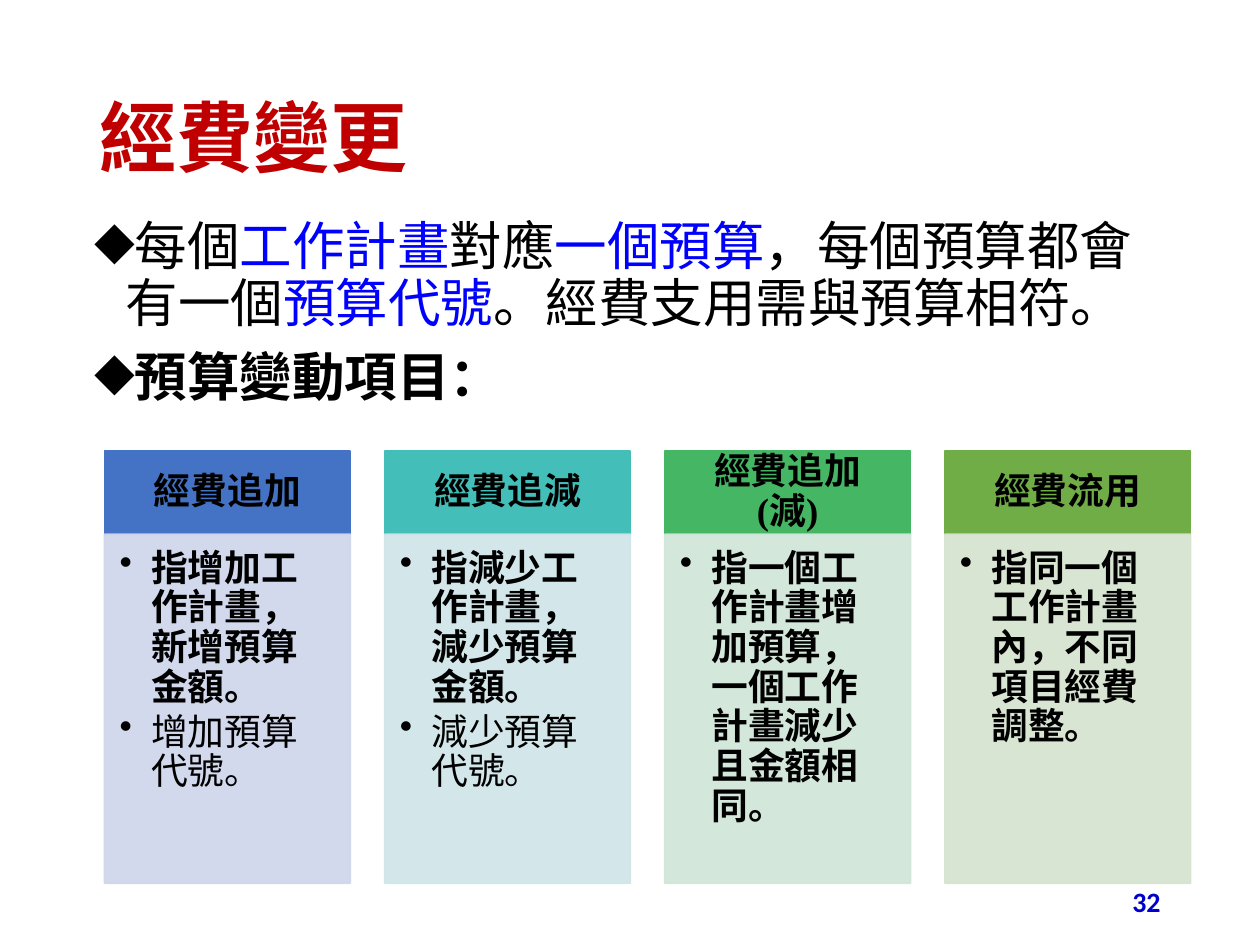
"""Build the budget change slide with four headed columns."""
import pptx
import pptx.util
import pptx.dml.color
import pptx.enum.shapes
import pptx.enum.text
import pptx.oxml
import pptx.oxml.ns
from lxml import etree

Inches, Pt = pptx.util.Inches, pptx.util.Pt
ALIGN, ANCHOR = pptx.enum.text.PP_ALIGN, pptx.enum.text.MSO_ANCHOR

COLORS = {"black": "000000", "blue": "0000FF", "red": "C00000", "number": "0000CC"}
TITLE = "經費變更"
NUMBER = "32"
BODY = [
    [("每個", "black"), ("工作計畫", "blue"), ("對應", "black"), ("一個預算", "blue"),
     ("，每個預算都會有一個", "black"), ("預算代號", "blue"),
     ("。經費支用需與預算相符。", "black")],
    [("預算變動項目：", "black")],
]
COLUMNS = [
    ("經費追加", "4472C4", "CFD5EA", ["指增加工作計畫，新增預算金額。", "增加預算代號。"]),
    ("經費追減", "43BEB9", "CFE5E8", ["指減少工作計畫，減少預算金額。", "減少預算代號。"]),
    ("經費追加(減)", "45B664", "CFE5D8", ["指一個工作計畫增加預算，一個工作計畫減少且金額相同。"]),
    ("經費流用", "70AD47", "D5E3CF", ["指同一個工作計畫內，不同項目經費調整。"]),
]
GRID = {"left": 0.83, "top": 3.58, "pitch": 2.223, "width": 1.95, "head": 0.66, "detail": 2.77}
HEAD_INSETS = (0.16, 0.09, 0.16, 0.09)
DETAIL_INSETS = (0.12, 0.12, 0.16, 0.18)


def rgb(value):
    return pptx.dml.color.RGBColor.from_string(value)


def apply(target, values):
    for name, value in values.items():
        setattr(target, name, value)


def set_frame(frame, anchor, insets=(0.1, 0.05, 0.1, 0.05)):
    names = ("margin_left", "margin_top", "margin_right", "margin_bottom")
    apply(frame, dict(zip(names, map(Inches, insets))))
    apply(frame, {"word_wrap": True, "vertical_anchor": anchor,
                  "auto_size": pptx.enum.text.MSO_AUTO_SIZE.NONE})


def write(para, spans, size, font, bold=False, bullet=None, **layout):
    if bullet:
        properties = para._p.get_or_add_pPr()
        apply_indent = {"marL": Inches(0.25), "indent": -Inches(0.25)}
        for name, value in apply_indent.items():
            properties.set(name, str(value))
        mark = etree.SubElement(properties, pptx.oxml.ns.qn("a:buChar"))
        mark.set("char", bullet)
    apply(para, layout)
    for text, color in spans:
        span = para.add_run()
        span.text = text
        apply(span.font, {"size": Pt(size), "name": font, "bold": bold})
        span.font.color.rgb = rgb(COLORS[color])


def add_panel(group, place, color, insets, anchor, alpha=None):
    panel = group.shapes.add_shape(pptx.enum.shapes.MSO_SHAPE.RECTANGLE, *map(Inches, place))
    panel.shadow.inherit = False
    panel.fill.solid()
    panel.fill.fore_color.rgb = rgb(color)
    panel.line.color.rgb = rgb(color)
    panel.line.width = Pt(1)
    if alpha:
        for node in panel._element.spPr.iter(pptx.oxml.ns.qn("a:srgbClr")):
            etree.SubElement(node, pptx.oxml.ns.qn("a:alpha")).set("val", str(alpha * 1000))
    set_frame(panel.text_frame, anchor, insets)
    return panel.text_frame


def paragraphs(frame, items):
    for index, item in enumerate(items):
        yield index, frame.paragraphs[0] if index == 0 else frame.add_paragraph(), item


def add_column(group, index, heading, color, tint, details):
    left = GRID["left"] + index * GRID["pitch"]
    top, width = GRID["top"], GRID["width"]
    head = add_panel(group, (left, top, width, GRID["head"]), color, HEAD_INSETS, ANCHOR.MIDDLE)
    write(head.paragraphs[0], [(heading, "black")], 21, "Times New Roman", True,
          alignment=ALIGN.CENTER, line_spacing=0.9)
    detail = add_panel(group, (left, top + GRID["head"], width, GRID["detail"]), tint,
                       DETAIL_INSETS, ANCHOR.TOP, 90)
    for row, para, text in paragraphs(detail, details):
        write(para, [(text, "black")], 21, "Times New Roman", row == 0, "•",
              alignment=ALIGN.LEFT, line_spacing=0.9, space_after=Pt(3))


def main():
    deck = pptx.Presentation()
    deck.slide_width, deck.slide_height = Inches(10), Inches(7.5)
    page = deck.slides.add_slide(deck.slide_layouts[5])

    title = page.shapes.title
    apply(title, {"left": Inches(0.69), "top": Inches(0.4),
                  "width": Inches(8.62), "height": Inches(1.45)})
    set_frame(title.text_frame, ANCHOR.MIDDLE)
    write(title.text_frame.paragraphs[0], [(TITLE, "red")], 44, "Noto Sans CJK SC", True,
          alignment=ALIGN.LEFT, line_spacing=0.9)

    body = page.shapes.add_textbox(*map(Inches, (0.65, 1.7, 8.62, 1.75))).text_frame
    set_frame(body, ANCHOR.TOP)
    for row, para, spans in paragraphs(body, BODY):
        write(para, spans, 30, "Arial", row == 1, "◆",
              line_spacing=0.9, space_before=Pt(10 * row))

    number = page.shapes.add_textbox(*map(Inches, (7.06, 6.95, 2.25, 0.4))).text_frame
    set_frame(number, ANCHOR.MIDDLE)
    write(number.paragraphs[0], [(NUMBER, "number")], 16, "Calibri", True, alignment=ALIGN.RIGHT)

    group = page.shapes.add_group_shape()
    for index, column in enumerate(COLUMNS):
        add_column(group, index, *column)
    deck.save("out.pptx")


if __name__ == "__main__":
    main()
